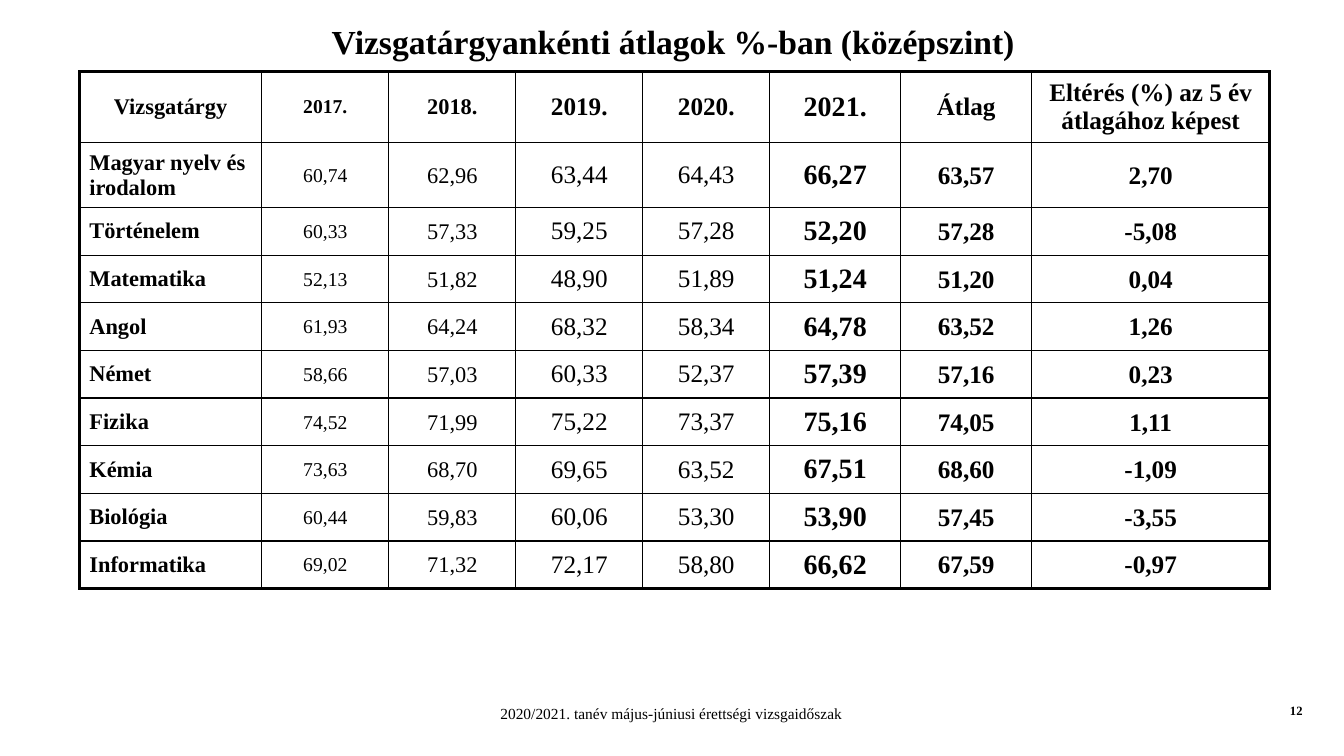
from lxml.etree import SubElement
from pptx import Presentation
from pptx.dml.color import RGBColor
from pptx.enum.text import MSO_ANCHOR as Anchor, PP_ALIGN as Align
from pptx.oxml.ns import qn
from pptx.util import Cm, Pt

FONT = "Times New Roman"
COLORS = {"text": "000000", "border": "000000"}
THIN, THICK = 1, 2.25

HEADINGS = ["Vizsgatárgy", "2017.", "2018.", "2019.", "2020.", "2021.", "Átlag",
            "Eltérés (%) az 5 év átlagához képest"]
RESULTS = [
    ["Magyar nyelv és irodalom", "60,74", "62,96", "63,44", "64,43", "66,27", "63,57", "2,70"],
    ["Történelem", "60,33", "57,33", "59,25", "57,28", "52,20", "57,28", "-5,08"],
    ["Matematika", "52,13", "51,82", "48,90", "51,89", "51,24", "51,20", "0,04"],
    ["Angol", "61,93", "64,24", "68,32", "58,34", "64,78", "63,52", "1,26"],
    ["Német", "58,66", "57,03", "60,33", "52,37", "57,39", "57,16", "0,23"],
    ["Fizika", "74,52", "71,99", "75,22", "73,37", "75,16", "74,05", "1,11"],
    ["Kémia", "73,63", "68,70", "69,65", "63,52", "67,51", "68,60", "-1,09"],
    ["Biológia", "60,44", "59,83", "60,06", "53,30", "53,90", "57,45", "-3,55"],
    ["Informatika", "69,02", "71,32", "72,17", "58,80", "66,62", "67,59", "-0,97"],
]
COLUMN_WIDTHS = [4.6, 3.2, 3.2, 3.2, 3.2, 3.3, 3.3, 6]
COLUMN_SIZES = [16, 14, 16, 18, 18, 20, 18, 18]
ROW_HEIGHTS = [1.8, 1.63] + [1.2] * 8
REGULAR_COLUMNS = range(1, 5)
TIGHT_COLUMNS = (1, 2, 6, 7)


def write_text(frame, text, size, bold, align):
    """Put one formatted paragraph into a text frame."""
    frame.text = text
    paragraph = frame.paragraphs[0]
    paragraph.alignment = align
    font = paragraph.runs[0].font
    font.name, font.size, font.bold = FONT, Pt(size), bold
    font.color.rgb = RGBColor.from_string(COLORS["text"])
    return paragraph


def add_label(slide, text, box, size, bold=False, align=Align.CENTER, wrap=True):
    """Add a text box at (left, top, width, height) in centimetres."""
    frame = slide.shapes.add_textbox(*map(Cm, box)).text_frame
    frame.word_wrap = wrap
    return write_text(frame, text, size, bold, align)


def set_borders(cell, widths):
    """Draw the left, right, top and bottom borders of a cell."""
    properties = cell._tc.get_or_add_tcPr()
    for side, width in zip("LRTB", widths):
        line = SubElement(properties, qn(f"a:ln{side}"), w=str(Pt(width)))
        fill = SubElement(line, qn("a:solidFill"))
        SubElement(fill, qn("a:srgbClr"), val=COLORS["border"])


def fill_cell(cell, text, row, column):
    """Format one cell by its place in the results table."""
    last_row, last_column = len(RESULTS), len(HEADINGS) - 1
    outer_sides = (column == 0, column == last_column, row == 0, row == last_row)
    set_borders(cell, [THICK if outer else THIN for outer in outer_sides])
    cell.fill.background()
    cell.vertical_anchor = Anchor.MIDDLE
    if row and column in TIGHT_COLUMNS:
        cell.margin_left = cell.margin_right = cell.margin_top = Cm(0.03)
        cell.margin_bottom = 0
    bold = row == 0 or column not in REGULAR_COLUMNS
    align = Align.LEFT if row and column == 0 else Align.CENTER
    write_text(cell.text_frame, text, COLUMN_SIZES[column], bold, align)


def add_results_table(slide, left, top):
    """Add the table of yearly averages by subject."""
    rows = [HEADINGS] + RESULTS
    results = slide.shapes.add_table(
        len(rows), len(HEADINGS), Cm(left), Cm(top),
        Cm(sum(COLUMN_WIDTHS)), Cm(sum(ROW_HEIGHTS))).table
    results.horz_banding = False
    for column, width in zip(results.columns, COLUMN_WIDTHS):
        column.width = Cm(width)
    for table_row, height in zip(results.rows, ROW_HEIGHTS):
        table_row.height = Cm(height)
    for row, texts in enumerate(rows):
        for column, text in enumerate(texts):
            fill_cell(results.cell(row, column), text, row, column)


def main():
    """Build the slide of exam averages and save it."""
    deck = Presentation()
    deck.slide_width, deck.slide_height = Cm(33.87), Cm(19.05)
    slide = deck.slides.add_slide(deck.slide_layouts[6])
    add_label(slide, "2020/2021. tanév május-júniusi érettségi vizsgaidőszak",
              (9.12, 17.63, 15.6, 0.74), 11)
    title = add_label(slide, "Vizsgatárgyankénti átlagok %-ban (középszint)",
                      (2.69, 0.51, 28.55, 1.5), 24, bold=True)
    title.line_spacing = 0.9
    add_label(slide, "12", (32.26, 17.58, 0.84, 0.64), 9, bold=True,
              align=Align.LEFT, wrap=False)
    add_results_table(slide, 2, 1.8)
    deck.save("out.pptx")


if __name__ == "__main__":
    main()
